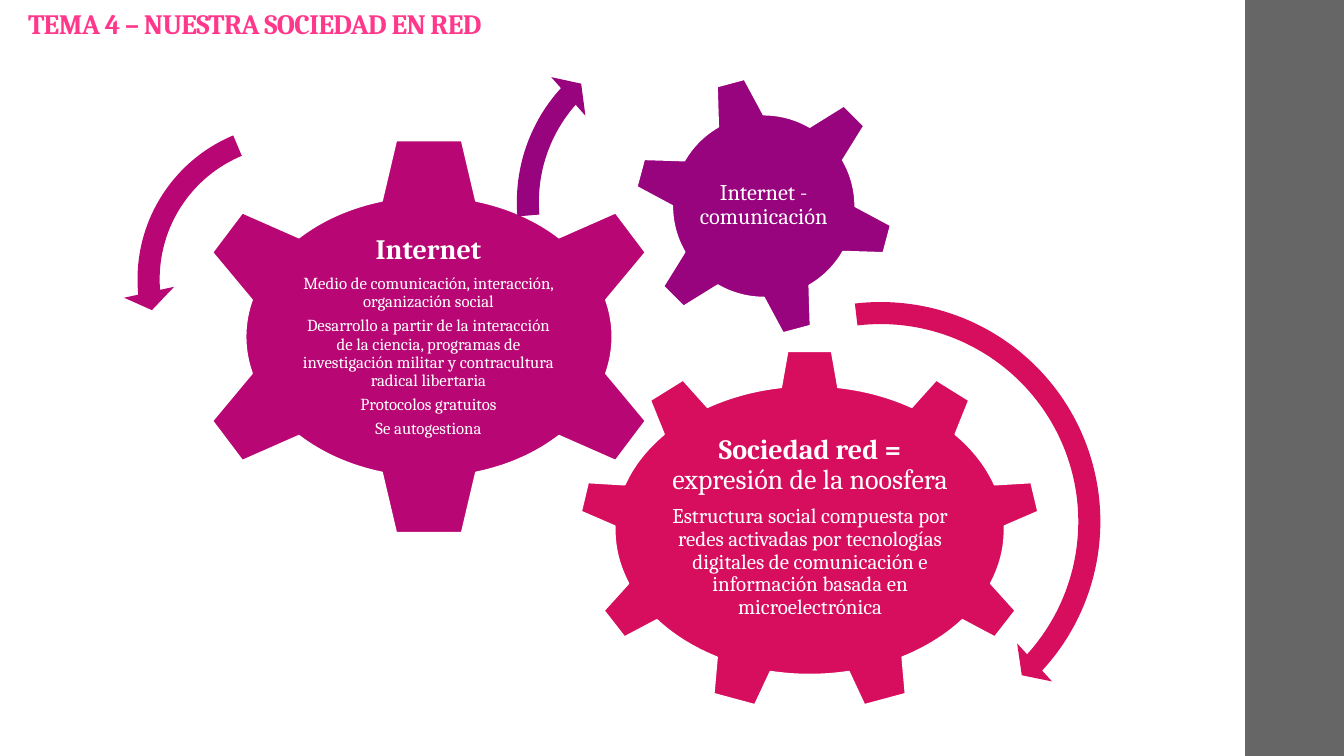
from dataclasses import dataclass

from pptx import Presentation
from pptx.dml.color import RGBColor
from pptx.enum.shapes import MSO_SHAPE as Preset
from pptx.enum.text import MSO_ANCHOR as Anchor, PP_ALIGN as Align
from pptx.util import Inches, Pt


@dataclass(frozen=True)
class Theme:
    font: str = "Cambria"
    white: str = "FFFFFF"
    band: str = "666666"
    title: str = "FF388C"
    network: str = "D70D5E"
    internet: str = "B80774"
    communication: str = "98037E"
    heading_size: int = 20
    label_size: int = 16
    body_size: int = 15
    detail_size: int = 12


THEME = Theme()


def add_preset(slide, preset, box, color, outline=None, rotation=0):
    shape = slide.shapes.add_shape(preset, *map(Inches, box))
    shape.shadow.inherit = False
    shape.rotation = rotation
    shape.fill.solid()
    shape.fill.fore_color.rgb = RGBColor.from_string(color)
    if outline:
        shape.line.color.rgb = RGBColor.from_string(outline)
        shape.line.width = Pt(1.1)
    else:
        shape.line.fill.background()
    return shape


def add_arc_arrow(slide, preset, box, color, thickness, head_angle, end, start, head_width):
    """Draw a curved arrow whose angles are in degrees, clockwise from the right."""
    arrow = add_preset(slide, preset, box, color)
    # Angles are stored in 60000ths of a degree, adjustments in 100000ths.
    angles = [angle * 0.6 for angle in (head_angle, end, start)]
    for index, value in enumerate([thickness, *angles, head_width]):
        arrow.adjustments[index] = value


def add_text(slide, box, paragraphs, *, color=THEME.white, align=Align.CENTER,
             anchor=Anchor.MIDDLE, insets=(0.03, 0.03, 0.03, 0.03),
             space_after=0.35, spacing=None):
    """Each paragraph is a size and its (text, bold) runs; space_after is a share of the size."""
    frame = slide.shapes.add_textbox(*map(Inches, box)).text_frame
    frame.word_wrap = True
    frame.vertical_anchor = anchor
    (frame.margin_left, frame.margin_top,
     frame.margin_right, frame.margin_bottom) = map(Inches, insets)
    for index, (size, runs) in enumerate(paragraphs):
        paragraph = frame.add_paragraph() if index else frame.paragraphs[0]
        paragraph.alignment = align
        paragraph.line_spacing = 0.9
        paragraph.space_after = Pt(size * space_after)
        for text, bold in runs:
            run = paragraph.add_run()
            run.text = text
            run.font.name = THEME.font
            run.font.size = Pt(size)
            run.font.bold = bold
            run.font.color.rgb = RGBColor.from_string(color)
            if spacing is not None:
                run.font._element.set("spc", str(round(spacing * 100)))


def add_gear(slide, preset, box, color, text_box, paragraphs, rotation=0):
    add_preset(slide, preset, box, color, THEME.white, rotation)
    add_text(slide, text_box, paragraphs)


def add_gears(slide):
    add_gear(slide, Preset.GEAR_9, (5.74, 3.47, 4.58, 3.58), THEME.network,
             (6.59, 4.31, 2.89, 1.84), [
                 (THEME.heading_size, [("Sociedad red = ", True),
                                       ("expresión de la noosfera", False)]),
                 (THEME.body_size, [("Estructura social compuesta por redes activadas por "
                                     "tecnologías digitales de comunicación e información "
                                     "basada en microelectrónica", False)]),
             ])
    details = [
        "Medio de comunicación, interacción, organización social",
        "Desarrollo a partir de la interacción de la ciencia, programas de "
        "investigación militar y contracultura radical libertaria",
        "Protocolos gratuitos",
        "Se autogestiona",
    ]
    add_gear(slide, Preset.GEAR_6, (1.84, 1.35, 4.83, 3.98), THEME.internet,
             (2.96, 2.36, 2.58, 1.96),
             [(THEME.heading_size, [("Internet", True)])]
             + [(THEME.detail_size, [(detail, False)]) for detail in details])
    add_gear(slide, Preset.GEAR_6, (6.28, 0.75, 2.59, 2.59), THEME.communication,
             (6.85, 1.31, 1.45, 1.45),
             [(THEME.label_size, [("Internet - comunicación", False)])], rotation=345)


def add_arrows(slide):
    add_arc_arrow(slide, Preset.CIRCULAR_ARROW, (6.41, 2.85, 4.65, 4.65), THEME.network,
                  thickness=0.047, head_angle=4.98, end=42.46, start=263.25, head_width=0.055)
    add_arc_arrow(slide, Preset.LEFT_CIRCULAR_ARROW, (1.22, 1.08, 3.38, 3.38), THEME.internet,
                  thickness=0.065, head_angle=7.17, end=174.82, start=247.3, head_width=0.075)
    add_arc_arrow(slide, Preset.CIRCULAR_ARROW, (4.98, 0.18, 3.65, 3.65), THEME.communication,
                  thickness=0.06, head_angle=6.57, end=221.9, start=175.14, head_width=0.07)


def main():
    presentation = Presentation()
    presentation.slide_width = Inches(13.33)
    presentation.slide_height = Inches(7.5)
    slide = presentation.slides.add_slide(presentation.slide_layouts[6])
    add_preset(slide, Preset.RECTANGLE, (12.35, 0, 0.98, 7.5), THEME.band)
    add_text(slide, (0.18, 0, 10.6, 0.45),
             [(THEME.heading_size, [("TEMA 4 – NUESTRA SOCIEDAD EN RED", True)])],
             color=THEME.title, align=Align.LEFT, anchor=Anchor.BOTTOM,
             insets=(0.1, 0.03, 0.1, 0.05), space_after=0, spacing=-0.5)
    add_gears(slide)
    add_arrows(slide)
    presentation.save("out.pptx")


if __name__ == "__main__":
    main()
